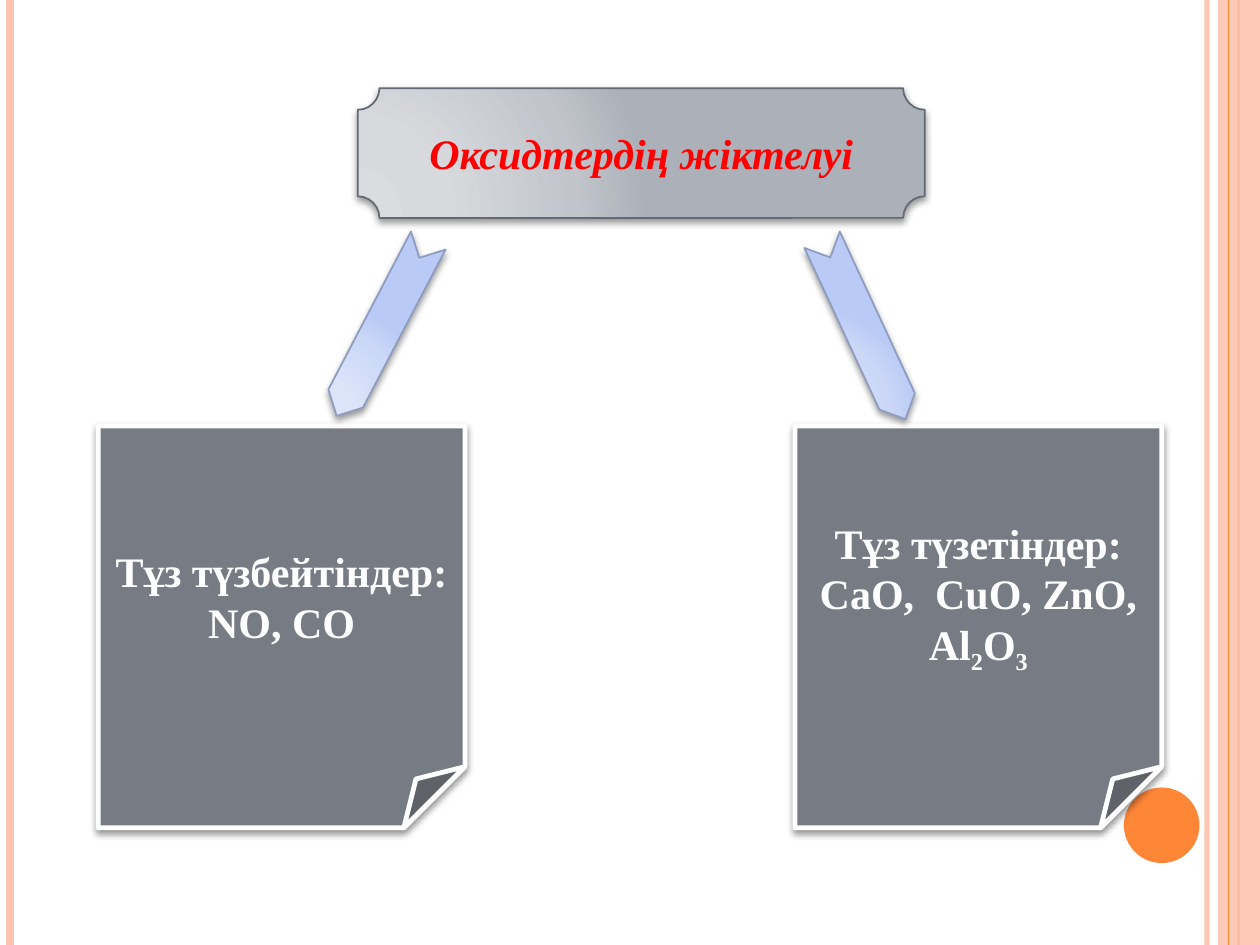
from lxml.etree import SubElement
from pptx import Presentation
from pptx.dml.color import RGBColor
from pptx.enum.shapes import MSO_CONNECTOR, MSO_SHAPE
from pptx.enum.text import MSO_ANCHOR, PP_ALIGN
from pptx.oxml import parse_xml
from pptx.oxml.ns import nsdecls, qn
from pptx.util import Pt

# Content: paragraphs are lists of (text, baseline in percent)
TITLE = [[("Оксидтердің жіктелуі", 0)]]
NOTES = [
    (56.16, [[("Тұз түзбейтіндер:", 0)], [("NO, CO", 0)]]),
    (454.32, [[("Тұз түзетіндер:", 0)],
              [("CaO,  CuO, ZnO, Al", 0), ("2", -25), ("О", 0), ("3", -25)]]),
]
ARROWS = [(162, 176.4, 117.6), (437.04, 177.12, 65.1)]  # left, top, rotation

THEME = {
    "font": "Times New Roman", "size": 24,
    "white": "FFFFFF", "red": "FF0000", "orange": "FE8637", "peach": "FEC3AE",
    "note": "777C84", "plaque_line": "636A74", "arrow_line": "8D9CBF",
    "plaque": [(0, "DADCE0"), (30, "D7D9DD"), (75, "C1C5CB"), (100, "ABB0B9")],
    "arrow": [(0, "DEE6FA"), (30, "DBE4F9"), (75, "CAD7F7"), (100, "B8CAF5")],
}
PAGE_WIDTH, PAGE_HEIGHT = 720, 540


def rgb(name):
    return RGBColor.from_string(THEME[name])


def set_alpha(parent, percent):
    color = next(parent.iter(qn("a:srgbClr")))
    SubElement(color, qn("a:alpha"), val=str(percent * 1000))


def add_rule(page, x, color, width, alpha=None):
    rule = page.shapes.add_connector(
        MSO_CONNECTOR.STRAIGHT, Pt(x), Pt(0), Pt(x), Pt(PAGE_HEIGHT))
    rule.line.color.rgb = rgb(color)
    rule.line.width = Pt(width)
    properties = rule.element.spPr
    if alpha:
        set_alpha(properties, alpha)
    SubElement(properties, qn("a:effectLst"))


def add_box(page, kind, left, top, width, height, fill, line=None, line_width=1):
    box = page.shapes.add_shape(kind, Pt(left), Pt(top), Pt(width), Pt(height))
    box.shadow.inherit = False
    box.fill.solid()
    if isinstance(THEME[fill], list):
        set_gradient(box, THEME[fill])
    else:
        box.fill.fore_color.rgb = rgb(fill)
    if line:
        box.line.color.rgb = rgb(line)
        box.line.width = Pt(line_width)
        add_shadow(box)
    else:
        box.line.fill.background()
    return box


def set_gradient(box, stops):
    stop_xml = "".join(
        f'<a:gs pos="{position * 1000}"><a:srgbClr val="{color}"/></a:gs>'
        for position, color in stops)
    gradient = parse_xml(
        f'<a:gradFill {nsdecls("a")} rotWithShape="1"><a:gsLst>{stop_xml}</a:gsLst>'
        '<a:path path="circle"><a:fillToRect l="5000" t="100000" r="120000" b="10000"/>'
        '</a:path></a:gradFill>')
    properties = box.element.spPr
    properties.replace(properties.find(qn("a:solidFill")), gradient)


def add_shadow(box):
    effects = box.element.spPr.find(qn("a:effectLst"))
    shadow = SubElement(
        effects, qn("a:outerShdw"), blurRad=str(Pt(4)), dist=str(Pt(2)),
        dir=str(90 * 60000), algn="ctr", rotWithShape="0")
    color = SubElement(shadow, qn("a:srgbClr"), val="000000")
    SubElement(color, qn("a:alpha"), val="40000")


def write(box, paragraphs, color, italic=False):
    frame = box.text_frame
    frame.word_wrap = True
    frame.vertical_anchor = MSO_ANCHOR.MIDDLE
    for index, spans in enumerate(paragraphs):
        para = frame.add_paragraph() if index else frame.paragraphs[0]
        para.alignment = PP_ALIGN.CENTER
        for text, baseline in spans:
            span = para.add_run()
            span.text = text
            span.font.name = THEME["font"]
            span.font.size = Pt(THEME["size"])
            span.font.bold = True
            span.font.italic = italic
            span.font.color.rgb = rgb(color)
            if baseline:
                span.font.element.set("baseline", str(baseline * 1000)) if hasattr(
                    span.font, "element") else span._r.get_or_add_rPr().set(
                    "baseline", str(baseline * 1000))


def main():
    deck = Presentation()
    deck.slide_width, deck.slide_height = Pt(PAGE_WIDTH), Pt(PAGE_HEIGHT)
    page = deck.slides.add_slide(deck.slide_layouts[6])

    # Border stripes and corner disc
    add_rule(page, 689.76, "peach", 3, alpha=93)
    add_rule(page, 5.76, "peach", 4.5)
    add_rule(page, 707.76, "orange", 1.5)
    band = add_box(page, MSO_SHAPE.RECTANGLE, 696, 0, 24, PAGE_HEIGHT, "peach")
    set_alpha(band.element.spPr, 87)
    add_rule(page, 702, "orange", 0.75)
    add_box(page, MSO_SHAPE.OVAL, 642.24, 450, 43.2, 43.2, "orange")

    # Title plaque
    plaque = add_box(page, MSO_SHAPE.PLAQUE, 204.48, 50.4, 324, 74.16,
                     "plaque", "plaque_line")
    write(plaque, TITLE, "red", italic=True)

    # Folded notes
    for left, paragraphs in NOTES:
        note = add_box(page, MSO_SHAPE.FOLDED_CORNER, left, 243.36, 209.52, 229.68,
                       "note", "white", 2.75)
        write(note, paragraphs, "white")

    # Arrows from the title to the notes
    for left, top, rotation in ARROWS:
        arrow = add_box(page, MSO_SHAPE.CHEVRON, left, top, 113.04, 22.32,
                        "arrow", "arrow_line")
        arrow.rotation = rotation

    deck.save("out.pptx")


if __name__ == "__main__":
    main()
